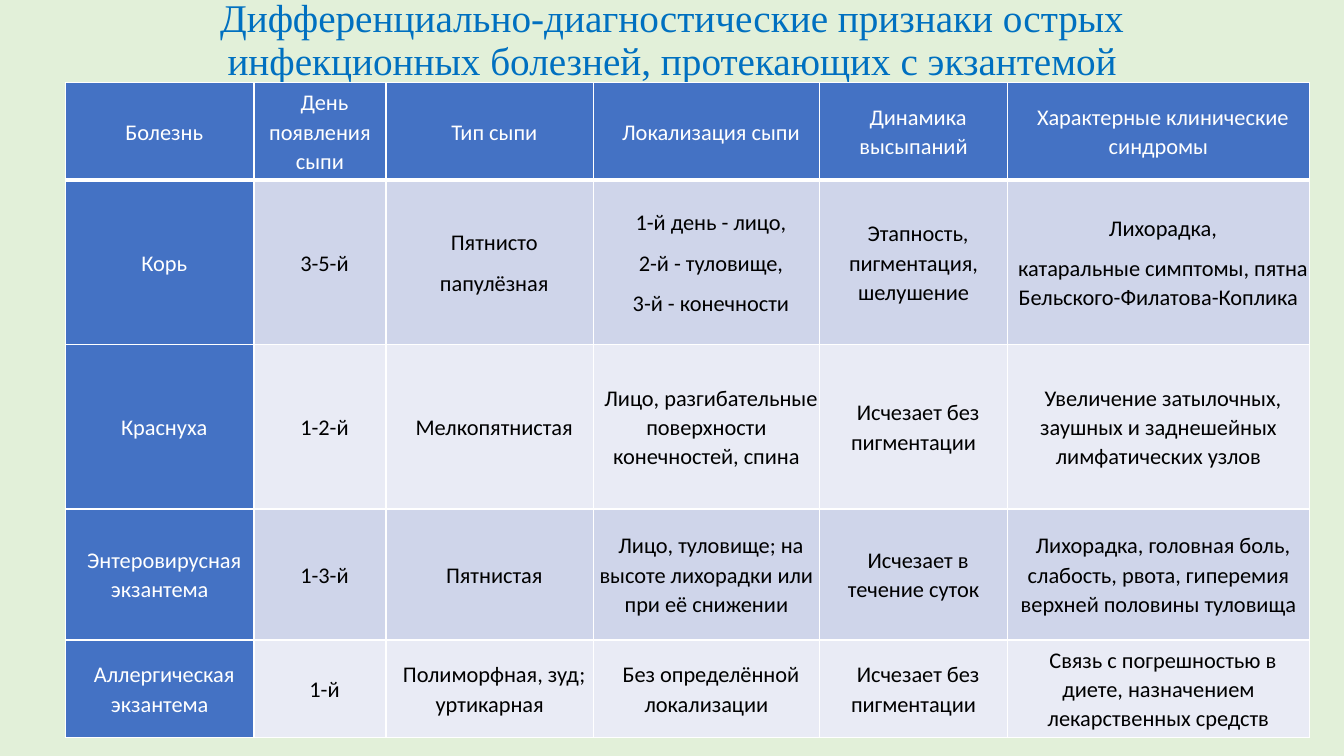
from dataclasses import dataclass

import lxml.etree
import pptx
import pptx.dml.color
import pptx.enum.text
import pptx.oxml.ns
import pptx.slide
import pptx.table
import pptx.text.text
import pptx.util

COLOURS: dict[str, str] = {
    "background": "E2F0D9",
    "title": "0070C0",
    "heading": "4472C4",
    "odd row": "CFD5EA",
    "even row": "E9EBF5",
    "white": "FFFFFF",
    "black": "000000",
}
COLUMN_WIDTHS: list[float] = [134.6, 94.3, 148.3, 161.3, 134.6, 215.3]
HEADER_HEIGHT = 69.8


@dataclass(frozen=True)
class Disease:
    """One table row; a line break in a value starts a new paragraph."""

    name: str
    rash_day: str
    rash_type: str
    location: str
    dynamics: str
    syndromes: str
    height: float

    def values(self) -> list[str]:
        return [self.name, self.rash_day, self.rash_type,
                self.location, self.dynamics, self.syndromes]


HEADINGS = Disease(
    "Болезнь", "День появления сыпи", "Тип сыпи", "Локализация сыпи",
    "Динамика высыпаний", "Характерные клинические синдромы", HEADER_HEIGHT)

DISEASES: list[Disease] = [
    Disease("Корь", "3-5-й", "Пятнисто\nпапулёзная",
            "1-й день - лицо,\n2-й - туловище,\n3-й - конечности",
            "Этапность, пигментация, шелушение",
            "Лихорадка,\nкатаральные симптомы, пятна Бельского-Филатова-Коплика",
            117.4),
    Disease("Краснуха", "1-2-й", "Мелкопятнистая",
            "Лицо, разгибательные поверхности конечностей, спина",
            "Исчезает без пигментации",
            "Увеличение затылочных, заушных и заднешейных лимфатических узлов",
            117.4),
    Disease("Энтеровирусная экзантема", "1-3-й", "Пятнистая",
            "Лицо, туловище; на высоте лихорадки или при её снижении",
            "Исчезает в течение суток",
            "Лихорадка, головная боль, слабость, рвота, гиперемия верхней половины туловища",
            93.6),
    Disease("Аллергическая экзантема", "1-й", "Полиморфная, зуд; уртикарная",
            "Без определённой локализации", "Исчезает без пигментации",
            "Связь с погрешностью в диете, назначением лекарственных средств",
            69.8),
]


def colour(name: str) -> pptx.dml.color.RGBColor:
    return pptx.dml.color.RGBColor.from_string(COLOURS[name])


def add_border(cell: pptx.table._Cell, side: str, width: float) -> None:
    properties = cell._tc.get_or_add_tcPr()
    line = lxml.etree.SubElement(
        properties, pptx.oxml.ns.qn(f"a:ln{side}"), w=str(pptx.util.Pt(width)))
    fill = lxml.etree.SubElement(line, pptx.oxml.ns.qn("a:solidFill"))
    lxml.etree.SubElement(fill, pptx.oxml.ns.qn("a:srgbClr"), val=COLOURS["white"])


def format_paragraph(paragraph: pptx.text.text._Paragraph, text_colour: str) -> None:
    paragraph.alignment = pptx.enum.text.PP_ALIGN.CENTER
    paragraph.line_spacing = 1.07
    paragraph.space_after = pptx.util.Pt(8)
    properties = paragraph._p.get_or_add_pPr()
    properties.set("marL", "0")
    properties.set("indent", str(pptx.util.Pt(6.5)))
    paragraph.font.name = "Calibri"
    paragraph.font.size = pptx.util.Pt(16)
    paragraph.font.bold = False
    paragraph.font.color.rgb = colour(text_colour)


def fill_cell(cell: pptx.table._Cell, text: str, fill: str, text_colour: str,
              bottom_border: float) -> None:
    cell.margin_left = cell.margin_right = pptx.util.Pt(0)
    cell.margin_top = cell.margin_bottom = pptx.util.Pt(0)
    cell.vertical_anchor = pptx.enum.text.MSO_ANCHOR.MIDDLE
    for side in "LRT":
        add_border(cell, side, 1)
    add_border(cell, "B", bottom_border)
    cell.fill.solid()
    cell.fill.fore_color.rgb = colour(fill)
    cell.text_frame.text = text
    for paragraph in cell.text_frame.paragraphs:
        format_paragraph(paragraph, text_colour)


def add_title(slide: pptx.slide.Slide) -> None:
    title = slide.shapes.title
    title.left, title.top = pptx.util.Pt(66), pptx.util.Pt(-14.4)
    title.width, title.height = pptx.util.Pt(828), pptx.util.Pt(87.8)
    title.text_frame.text = ("Дифференциально-диагностические признаки острых "
                             "инфекционных болезней, протекающих с экзантемой")
    title.text_frame.word_wrap = True
    title.text_frame.auto_size = pptx.enum.text.MSO_AUTO_SIZE.NONE
    title.text_frame.vertical_anchor = pptx.enum.text.MSO_ANCHOR.MIDDLE
    heading = title.text_frame.paragraphs[0]
    heading.alignment = pptx.enum.text.PP_ALIGN.CENTER
    heading.line_spacing = 0.9
    heading.font.name = "Times New Roman"
    heading.font.size = pptx.util.Pt(28)
    heading.font.color.rgb = colour("title")


def add_disease_table(slide: pptx.slide.Slide) -> None:
    rows = [HEADINGS, *DISEASES]
    signs = slide.shapes.add_table(
        len(rows), len(COLUMN_WIDTHS), pptx.util.Pt(46.8), pptx.util.Pt(59),
        pptx.util.Pt(sum(COLUMN_WIDTHS)),
        pptx.util.Pt(sum(row.height for row in rows))).table
    for column, width in zip(signs.columns, COLUMN_WIDTHS):
        column.width = pptx.util.Pt(width)
    for row_index, disease in enumerate(rows):
        signs.rows[row_index].height = pptx.util.Pt(disease.height)
        band = "odd row" if row_index % 2 else "even row"
        for column_index, text in enumerate(disease.values()):
            is_heading = row_index == 0 or column_index == 0
            fill_cell(signs.cell(row_index, column_index), text,
                      "heading" if is_heading else band,
                      "white" if is_heading else "black",
                      3 if row_index == 0 else 1)


def main() -> None:
    presentation = pptx.Presentation()
    presentation.slide_width = pptx.util.Pt(960)
    presentation.slide_height = pptx.util.Pt(540)
    slide = presentation.slides.add_slide(presentation.slide_layouts[5])

    # Background
    slide.background.fill.solid()
    slide.background.fill.fore_color.rgb = colour("background")

    # Title and table of signs
    add_title(slide)
    add_disease_table(slide)
    presentation.save("out.pptx")


if __name__ == "__main__":
    main()
